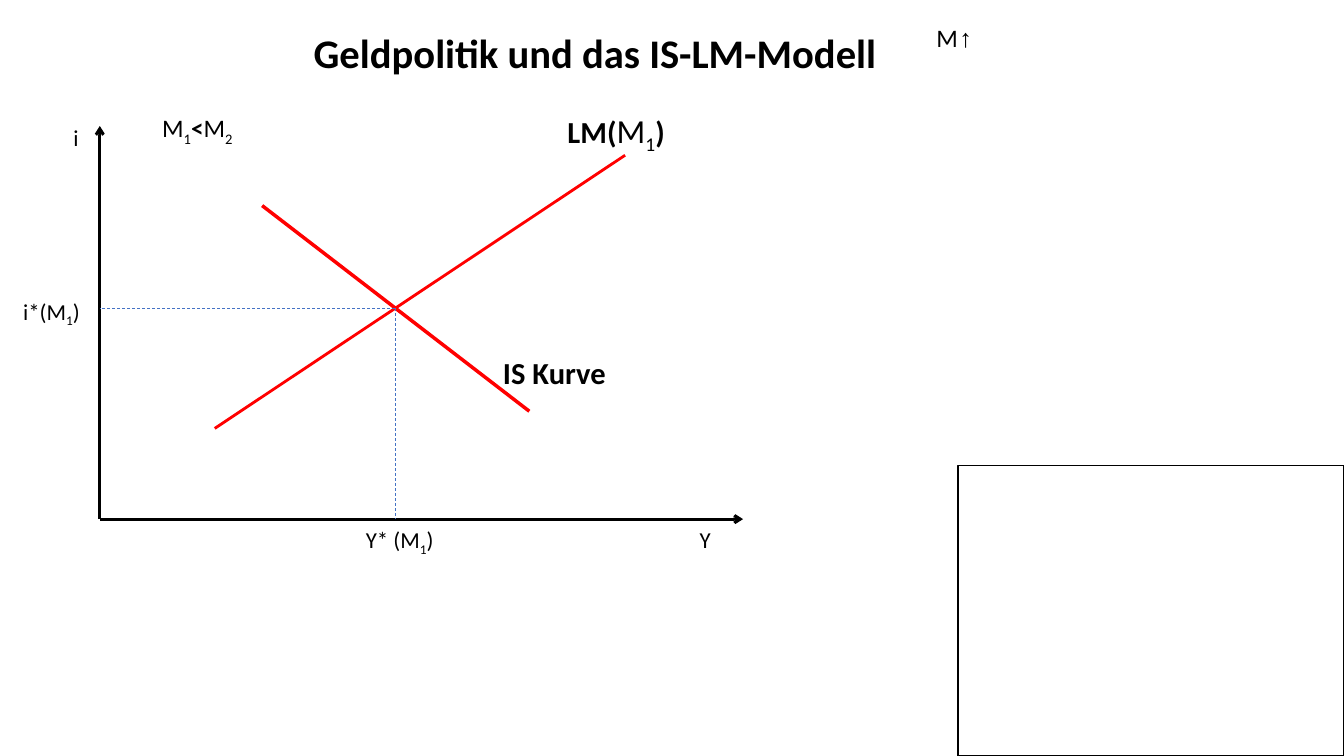
from pptx import Presentation
from pptx.dml.color import RGBColor
from pptx.enum.dml import MSO_LINE as Dash
from pptx.enum.shapes import MSO_CONNECTOR as Link, MSO_SHAPE as Shape
from pptx.enum.text import MSO_ANCHOR as Anchor, MSO_AUTO_SIZE as Fit, PP_ALIGN as Align
from pptx.oxml.ns import qn
from pptx.util import Inches, Pt
from lxml.etree import SubElement

BLACK, RED, BLUE = "000000", "FF0000", "4472C4"


def color(code):
    return RGBColor.from_string(code)


class Board:
    face = "Calibri"

    def __init__(self, slide):
        self.shapes = slide.shapes

    def text(self, box, runs, size, bold=None, wrap=False):
        label = self.shapes.add_textbox(*map(Inches, box))
        frame = label.text_frame
        frame.word_wrap = wrap
        frame.auto_size = Fit.SHAPE_TO_FIT_TEXT
        para = frame.paragraphs[0]
        font = para.font
        font.name, font.size, font.bold = self.face, Pt(size), bold
        font.color.rgb = color(BLACK)
        for part in runs:
            words, style = (part, {}) if isinstance(part, str) else part
            run = para.add_run()
            run.text = words
            if "base" in style:
                run.font._element.set("baseline", style["base"])
            if "size" in style:
                run.font.size = Pt(style["size"])
            if "bold" in style:
                run.font.bold = style["bold"]
            if "face" in style:
                run.font.name = style["face"]
        return frame

    def title(self, box, words, size):
        frame = self.text(box, [words], size, True, True)
        frame.auto_size = Fit.NONE
        frame.vertical_anchor = Anchor.MIDDLE
        frame.margin_left = frame.margin_right = Inches(0.09)
        frame.margin_top = frame.margin_bottom = Inches(0.04)
        frame.paragraphs[0].alignment = Align.CENTER

    def line(self, start, end, tint, width, arrow=False, dash=False):
        link = self.shapes.add_connector(Link.STRAIGHT, *map(Inches, start + end))
        link.line.color.rgb = color(tint)
        link.line.width = Pt(width)
        if dash:
            link.line.dash_style = Dash.DASH
        if arrow:
            SubElement(link.line._get_or_add_ln(), qn("a:tailEnd"), type="arrow")
        SubElement(link._element.spPr, qn("a:effectLst"))

    def frame(self, box, tint, width):
        rect = self.shapes.add_shape(Shape.RECTANGLE, *map(Inches, box))
        rect.shadow.inherit = False
        rect.fill.background()
        rect.line.color.rgb = color(tint)
        rect.line.width = Pt(width)


def main():
    deck = Presentation()
    deck.slide_width, deck.slide_height = Inches(13.33), Inches(7.5)
    board = Board(deck.slides.add_slide(deck.slide_layouts[6]))
    one, two = [(digit, {"base": "-25000"}) for digit in "12"]
    zero, meet = (0.99, 5.15), (3.92, 3.06)

    board.title((1.75, 0.11, 8.31, 0.81), "Geldpolitik und das IS-LM-Modell", 29)
    for tip in ((zero[0], 1.25), (7.37, zero[1])):
        board.line(zero, tip, BLACK, 2, arrow=True)
    board.line((2.13, 4.25), (6.2, 1.54), RED, 2)
    board.line((2.6, 2.04), (5.25, 4.08), RED, 2.5)

    for box, runs in (
        ((0.63, 1.18, 0.25, 0.38), ["i"]),
        ((6.84, 5.17, 0.31, 0.38), ["Y"]),
        ((3.53, 5.17, 0.89, 0.38), ["Y* (M", one, ")"]),
        ((0.13, 2.9, 0.78, 0.38), ["i*(M", one, ")"]),
    ):
        board.text(box, runs, 16.3)
    board.text((4.89, 3.46, 1.23, 0.47), ["IS Kurve"], 21.8, True)
    large = {"size": 24, "bold": False}
    board.text((5.53, 1.04, 1.19, 0.5),
               ["LM(", ("M", large), (one[0], {**one[1], **large}), ")"], 21.8, True)

    for foot in ((zero[0], meet[1]), (meet[0], zero[1])):
        board.line(meet, foot, BLUE, 0.5, dash=True)
    board.text((1.51, 1.07, 0.93, 0.4), ["M", one, ("<", {"bold": True}), "M", two], 18)
    board.text((9.19, 0.17, 0.63, 0.4), ["M", ("↑", {"face": "Noto Sans Mono"})], 18, wrap=True)
    board.frame((9.5, 4.62, 3.83, 2.88), BLACK, 1)
    deck.save("out.pptx")


if __name__ == "__main__":
    main()
